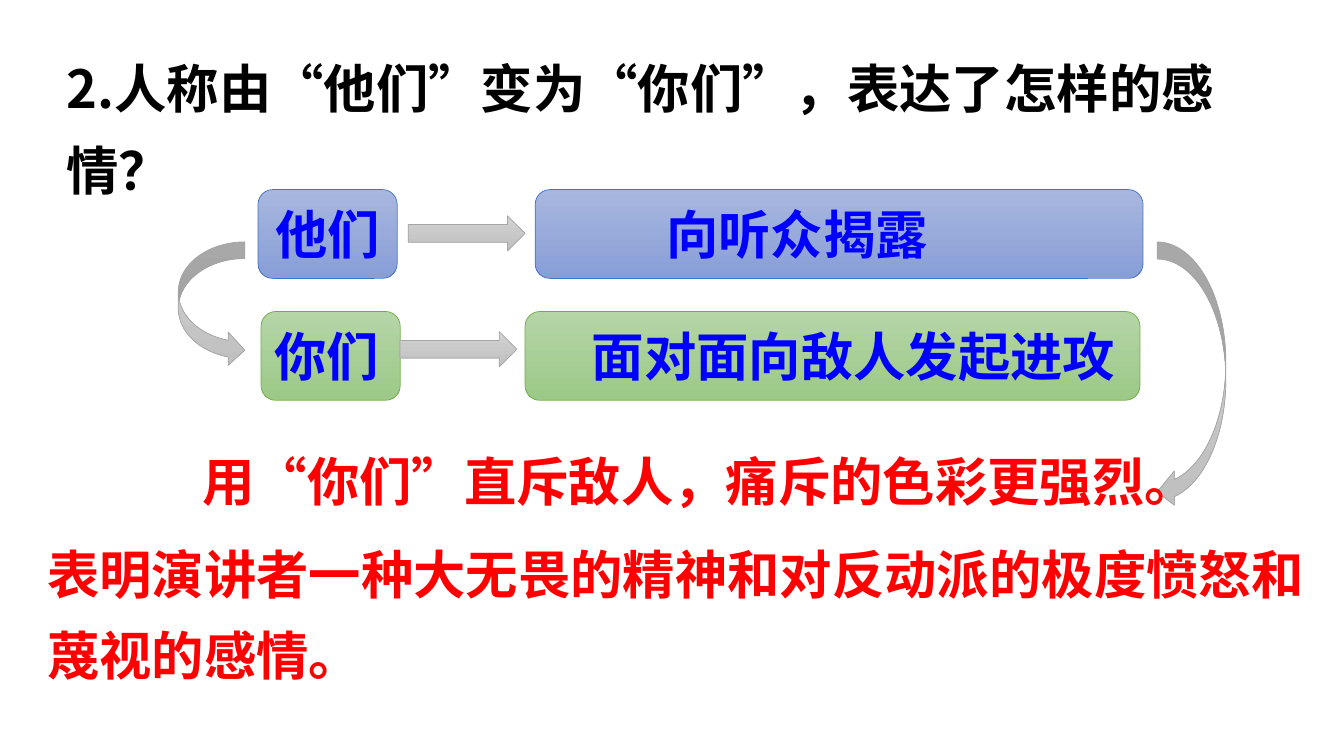
from pptx import Presentation
from pptx.dml.color import RGBColor
from pptx.enum.shapes import MSO_SHAPE as Preset
from pptx.enum.text import MSO_ANCHOR as Anchor, MSO_AUTO_SIZE as AutoSize, PP_ALIGN as Align
from pptx.util import Pt

COLORS = {
    "question": "000000",
    "label": "0000FF",
    "answer": "FF0000",
}
SHADES = {
    "they": ("A8B7DF", "889ED7", "4472C4"),
    "you": ("B5D5A7", "9CC987", "70AD47"),
    "arrow": ("D2D2D2", "C0C0C0", "A5A5A5"),
}
TEXT_SIZE = Pt(37.4)
BOX_HEIGHT = 63.5
LABEL_HEIGHT = 52.5
LABEL_DROP = 5.5


def rgb(value):
    return RGBColor.from_string(value)


def write(frame, text, color, font="Arial", align=Align.LEFT, before=12, spacing=None):
    frame.word_wrap = True
    frame.auto_size = AutoSize.NONE
    frame.vertical_anchor = Anchor.TOP
    frame.text = text
    paragraph = frame.paragraphs[0]
    paragraph.alignment = align
    paragraph.space_before = Pt(before)
    paragraph.line_spacing = spacing
    paragraph.font.name = font
    paragraph.font.size = TEXT_SIZE
    paragraph.font.bold = True
    paragraph.font.color.rgb = rgb(COLORS[color])


def add_question(slide, text, left, top, width, height):
    question = slide.shapes.title
    question.left, question.top = Pt(left), Pt(top)
    question.width, question.height = Pt(width), Pt(height)
    write(question.text_frame, text, "question", "Noto Sans CJK SC", before=0, spacing=1.3)


def add_text(shapes, text, color, left, top, width, height, **style):
    box = shapes.add_textbox(Pt(left), Pt(top), Pt(width), Pt(height))
    write(box.text_frame, text, color, **style)


def add_shaded(shapes, preset, shade, left, top, width, height):
    light, dark, outline = SHADES[shade]
    shape = shapes.add_shape(preset, Pt(left), Pt(top), Pt(width), Pt(height))
    shape.shadow.inherit = False
    shape.fill.gradient()
    shape.fill.gradient_angle = 270
    for stop, color in zip(shape.fill.gradient_stops, (light, dark)):
        stop.color.rgb = rgb(color)
    shape.line.color.rgb = rgb(outline)
    shape.line.width = Pt(0.5)


def add_box(shapes, shade, top, box_span, text, text_span, align=Align.CENTER):
    left, width = box_span
    add_shaded(shapes, Preset.ROUNDED_RECTANGLE, shade, left, top, width, BOX_HEIGHT)
    left, width = text_span
    add_text(shapes, text, "label", left, top + LABEL_DROP, width, LABEL_HEIGHT, align=align)


def main():
    deck = Presentation()
    deck.slide_width, deck.slide_height = Pt(960), Pt(540)
    slide = deck.slides.add_slide(deck.slide_layouts[5])
    shapes = slide.shapes

    add_question(slide, "2.人称由“他们”变为“你们”，表达了怎样的感情？", 40.3, 23, 835, 124.5)

    they_top, you_top = 135.4, 222.5
    add_box(shapes.add_group_shape().shapes, "they", they_top,
            (184.3, 99.4), "他们", (184.3, 99.4))
    add_shaded(shapes, Preset.CURVED_RIGHT_ARROW, "arrow", 127.4, 172.8, 47.5, 89.3)
    add_box(shapes.add_group_shape().shapes, "you", you_top,
            (186.5, 99.4), "你们", (184.3, 98.6))

    for left, top in ((291.6, 154.1), (285.8, 236.9)):
        add_shaded(shapes, Preset.RIGHT_ARROW, "arrow", left, top, 83.5, 25.2)

    add_box(shapes, "they", they_top, (382.3, 434.2), "向听众揭露", (468.7, 247), Align.LEFT)
    add_box(shapes, "you", you_top, (375.1, 439.2), "面对面向敌人发起进攻", (405.4, 409))
    add_shaded(shapes, Preset.CURVED_LEFT_ARROW, "arrow", 826.6, 172.8, 49, 190.8)

    add_text(shapes, "表明演讲者一种大无畏的精神和对反动派的极度愤怒和蔑视的感情。",
             "answer", 26.6, 370, 915.8, 124.5, spacing=1.3)
    add_text(shapes, "用“你们”直斥敌人，痛斥的色彩更强烈。",
             "answer", 137.5, 303.8, 728, 66.2, spacing=1.3)

    deck.save("out.pptx")


if __name__ == "__main__":
    main()
